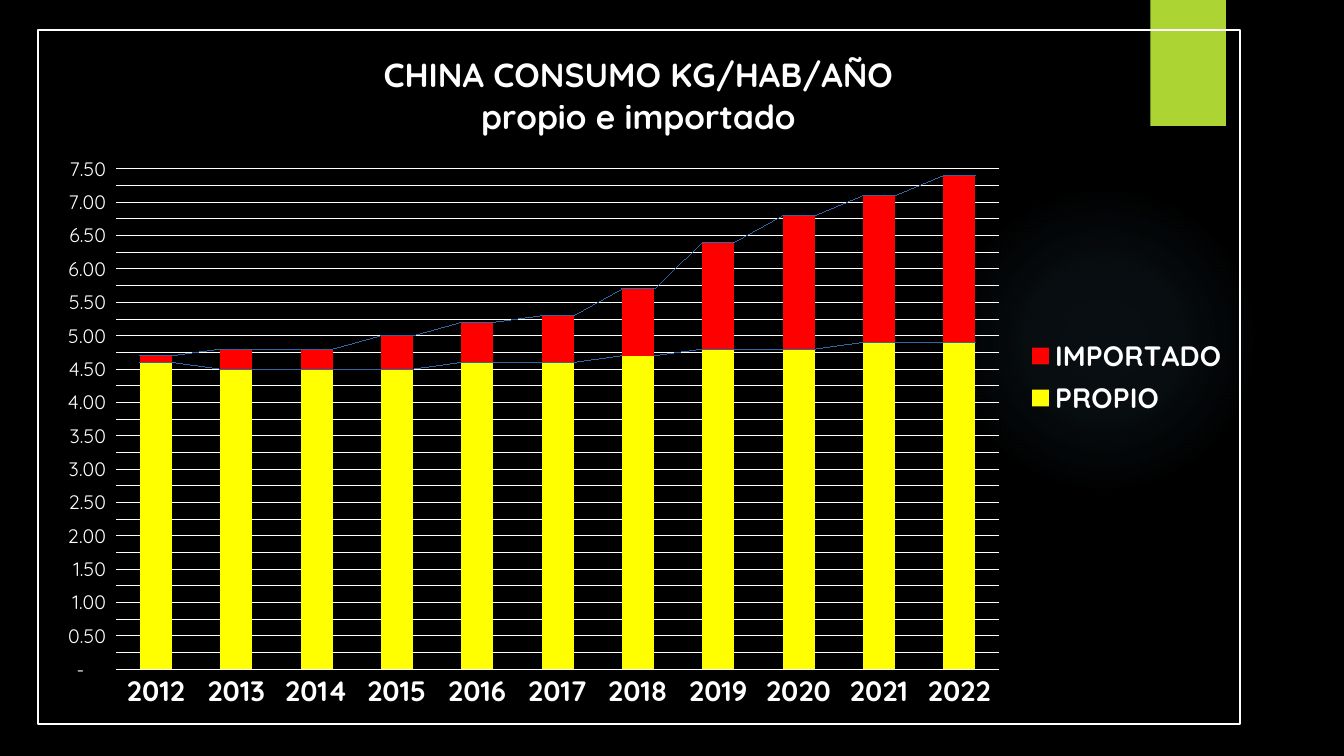
import pptx
import pptx.chart.data
import pptx.dml.color
import pptx.enum.chart
import pptx.enum.shapes
import pptx.oxml
import pptx.oxml.ns
import pptx.util
from pptx.util import Inches

FONT = "Quicksand"
WHITE = "FFFFFF"
CHART_WIDTH, CHART_HEIGHT = 11.94, 6.9
NAMESPACES = pptx.oxml.ns.nsdecls("a", "c")
YEARS = [str(year) for year in range(2012, 2023)]
SERIES = [
    ("PROPIO", "FFFF00", [4.6, 4.5, 4.5, 4.5, 4.6, 4.6, 4.7, 4.8, 4.8, 4.9, 4.9]),
    ("IMPORTADO", "FF0000", [0.1, 0.3, 0.3, 0.5, 0.6, 0.7, 1, 1.6, 2, 2.2, 2.5]),
]


def color(value):
    """Turn a hex string into a colour."""
    return pptx.dml.color.RGBColor.from_string(value)


def format_font(font, size, bold):
    """Apply the slide's white typeface at the given size."""
    font.name = FONT
    font.size = pptx.util.Pt(size)
    font.bold = bold
    font.color.rgb = color(WHITE)


def format_line(line, value, width):
    """Set the colour and the width in points of a line."""
    line.color.rgb = color(value)
    line.width = pptx.util.Pt(width)


def add_shape(slide, kind, left, top, width, height, fill):
    """Add a plain shape without outline or shadow."""
    shape = slide.shapes.add_shape(
        kind, Inches(left), Inches(top), Inches(width), Inches(height))
    shape.shadow.inherit = False
    shape.line.fill.background()
    shape.fill.solid()
    shape.fill.fore_color.rgb = color(fill)
    return shape


def add_glow(slide, left, top, size, tint):
    """Add a circle that fades out from its centre."""
    glow = add_shape(slide, pptx.enum.shapes.MSO_SHAPE.OVAL, left, top, size, size, tint)
    stops = "".join(
        f'<a:gs pos="{place * 1000}"><a:srgbClr val="{tint}">'
        f'<a:alpha val="{opacity * 1000}"/></a:srgbClr></a:gs>'
        for place, opacity in ((0, 7), (36, 6), (69, 0), (100, 0)))
    gradient = pptx.oxml.parse_xml(
        f'<a:gradFill {NAMESPACES}><a:gsLst>{stops}</a:gsLst><a:path path="circle">'
        '<a:fillToRect l="50000" t="50000" r="50000" b="50000"/></a:path></a:gradFill>')
    properties = glow.element.spPr
    properties.replace(properties.find(pptx.oxml.ns.qn("a:solidFill")), gradient)


def place_part(element, before, left, top, width=None, height=None, inner=False):
    """Fix a chart part at inches from the chart's corner."""
    for former in element.findall(pptx.oxml.ns.qn("c:layout")):
        element.remove(former)
    target = '<c:layoutTarget val="inner"/>' if inner else ""
    modes = '<c:xMode val="edge"/><c:yMode val="edge"/>'
    sizes = [("x", left, CHART_WIDTH), ("y", top, CHART_HEIGHT),
             ("w", width, CHART_WIDTH), ("h", height, CHART_HEIGHT)]
    values = "".join(f'<c:{name} val="{length / whole}"/>'
                     for name, length, whole in sizes if length is not None)
    layout = pptx.oxml.parse_xml(
        f"<c:layout {NAMESPACES}><c:manualLayout>{target}{modes}{values}"
        "</c:manualLayout></c:layout>")
    following = None if before is None else element.find(pptx.oxml.ns.qn(before))
    if following is None:
        element.insert(0, layout)
    else:
        following.addprevious(layout)


def format_title(chart, lines):
    """Write the chart title, one paragraph a line."""
    chart.has_title = True
    title = chart.chart_title
    title.include_in_layout = False
    frame = title.text_frame
    for index, line in enumerate(lines):
        para = frame.add_paragraph() if index else frame.paragraphs[0]
        span = para.add_run()
        span.text = line
        format_font(span.font, 24, True)
    place_part(title._element, "c:overlay", 3.4, 0.19)


def format_axes(chart):
    """Style the year axis and the value axis."""
    no_marks = pptx.enum.chart.XL_TICK_MARK.NONE
    years, amounts = chart.category_axis, chart.value_axis
    for axis, size, bold in ((years, 20, True), (amounts, 14, False)):
        axis.major_tick_mark = axis.minor_tick_mark = no_marks
        format_font(axis.tick_labels.font, size, bold)
    format_line(years.format.line, WHITE, 0.75)
    amounts.format.line.fill.background()
    amounts.minimum_scale = 0
    amounts.maximum_scale = 7.5
    amounts.major_unit = 0.25
    amounts.has_major_gridlines = True
    format_line(amounts.major_gridlines.format.line, WHITE, 0.75)
    amounts.tick_labels.number_format = (
        '_(* #,##0.00_);_(* \\(#,##0.00\\);_(* "-"??_);_(@_)')
    amounts.tick_labels.number_format_is_linked = False


def format_legend(chart):
    """Show the legend at the right of the columns."""
    chart.has_legend = True
    legend = chart.legend
    legend.position = pptx.enum.chart.XL_LEGEND_POSITION.RIGHT
    legend.include_in_layout = False
    format_font(legend.font, 20, True)
    place_part(legend._element, "c:overlay", 9.8, 3, 2.03, 0.9)


def format_columns(chart):
    """Colour the stacked columns and join them with series lines."""
    plot = chart.plots[0]
    plot.gap_width = 150
    plot.overlap = 100
    plot.vary_by_categories = False
    for series, (_, fill, _) in zip(plot.series, SERIES):
        series.format.fill.solid()
        series.format.fill.fore_color.rgb = color(fill)
    series_lines = pptx.oxml.parse_xml(
        f'<c:serLines {NAMESPACES}><c:spPr><a:ln w="9525"><a:solidFill>'
        '<a:srgbClr val="3A6EA5"/></a:solidFill></a:ln></c:spPr></c:serLines>')
    plot._element.find(pptx.oxml.ns.qn("c:axId")).addprevious(series_lines)


def add_consumption_chart(slide):
    """Add the framed chart of own and imported consumption."""
    data = pptx.chart.data.CategoryChartData(number_format="0.0")
    data.categories = YEARS
    for name, _, values in SERIES:
        data.add_series(name, values)
    chart = slide.shapes.add_chart(
        pptx.enum.chart.XL_CHART_TYPE.COLUMN_STACKED,
        Inches(0.37), Inches(0.29), Inches(CHART_WIDTH), Inches(CHART_HEIGHT), data).chart
    format_font(chart.font, 10, True)
    format_title(chart, ["CHINA CONSUMO KG/HAB/AÑO", "propio e importado"])
    format_axes(chart)
    format_legend(chart)
    format_columns(chart)
    area = chart._chartSpace.find(pptx.oxml.ns.qn("c:chart"))
    place_part(area.find(pptx.oxml.ns.qn("c:plotArea")), None, 0.77, 1.38, 8.78, 4.98, True)
    area.addnext(pptx.oxml.parse_xml(
        f'<c:spPr {NAMESPACES}><a:noFill/><a:ln w="19050"><a:solidFill>'
        f'<a:srgbClr val="{WHITE}"/></a:solidFill></a:ln></c:spPr>'))


def main():
    """Build and save the slide."""
    deck = pptx.Presentation()
    deck.slide_width, deck.slide_height = Inches(13.33), Inches(7.5)
    slide = deck.slides.add_slide(deck.slide_layouts[6])
    slide.background.fill.solid()
    slide.background.fill.fore_color.rgb = color("000000")
    add_glow(slide, 9.41, 1.83, 3.08, "7AC4F0")
    add_shape(slide, pptx.enum.shapes.MSO_SHAPE.RECTANGLE, 11.41, 0, 0.75, 1.25, "ACD433")
    add_consumption_chart(slide)
    deck.save("out.pptx")


if __name__ == "__main__":
    main()
